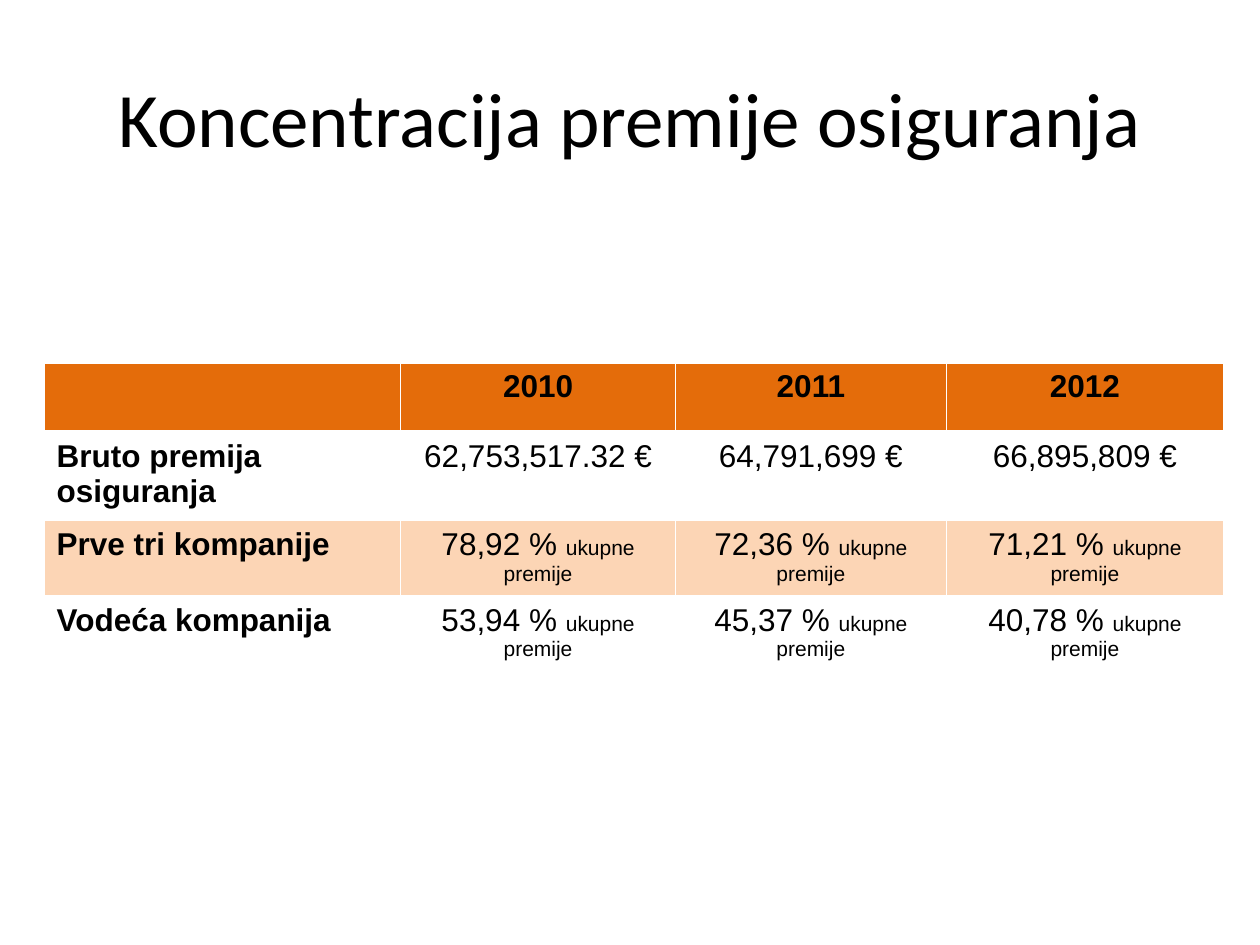
from dataclasses import dataclass

import pptx
import pptx.dml.color
import pptx.enum.text
import pptx.oxml
import pptx.oxml.ns
import pptx.util

Pt = pptx.util.Pt
Color = pptx.dml.color.RGBColor
Align = pptx.enum.text.PP_ALIGN


@dataclass(frozen=True)
class Theme:
    title_font: str = "Calibri"
    table_font: str = "Arial"
    title_size: float = 44
    body_size: float = 18
    note_size: float = 12
    text: str = "000000"
    border: str = "FFFFFF"
    header_fill: str = "E46C0A"
    plain_fill: str = "FFFFFF"
    band_fill: str = "FCD5B5"


@dataclass(frozen=True)
class TableRow:
    label: str
    values: tuple[str, ...]
    height: float
    fill: str
    note: str = ""
    header: bool = False


THEME = Theme()
SHARE_NOTE = "ukupne premije"
COLUMN_WIDTHS = (203.8, 157, 154.8, 158.4)
ROWS = (
    TableRow("", ("2010", "2011", "2012"), 39.6, THEME.header_fill, header=True),
    TableRow("Bruto premija osiguranja",
             ("62,753,517.32 €", "64,791,699 €", "66,895,809 €"),
             39.6, THEME.plain_fill),
    TableRow("Prve tri kompanije", ("78,92 % ", "72,36 % ", "71,21 % "),
             38.9, THEME.band_fill, SHARE_NOTE),
    TableRow("Vodeća kompanija", ("53,94 % ", "45,37 % ", "40,78 % "),
             45.4, THEME.plain_fill, SHARE_NOTE),
)


def add_run(paragraph, text: str, font: str, size: float, bold: bool = False) -> None:
    run = paragraph.add_run()
    run.text = text
    run.font.name = font
    run.font.size = Pt(size)
    run.font.bold = bold
    run.font.color.rgb = Color.from_string(THEME.text)


def add_title(slide, text: str) -> None:
    box = slide.shapes.add_textbox(Pt(36), Pt(21.6), Pt(648), Pt(90))
    frame = box.text_frame
    frame.word_wrap = True
    frame.vertical_anchor = pptx.enum.text.MSO_ANCHOR.MIDDLE
    paragraph = frame.paragraphs[0]
    paragraph.alignment = Align.CENTER
    add_run(paragraph, text, THEME.title_font, THEME.title_size)


def set_borders(cell, bottom_width: float) -> None:
    properties = cell._tc.get_or_add_tcPr()
    widths = {"lnL": 1, "lnR": 1, "lnT": 1, "lnB": bottom_width}
    for position, (side, width) in enumerate(widths.items()):
        line = pptx.oxml.parse_xml(
            f'<a:{side} {pptx.oxml.ns.nsdecls("a")} w="{Pt(width)}"><a:solidFill>'
            f'<a:srgbClr val="{THEME.border}"/></a:solidFill></a:{side}>'
        )
        properties.insert(position, line)


def fill_cell(cell, row: TableRow, column: int) -> None:
    cell.fill.solid()
    cell.fill.fore_color.rgb = Color.from_string(row.fill)
    set_borders(cell, 3 if row.header else 1)
    is_label = column == 0
    text = row.label if is_label else row.values[column - 1]
    paragraph = cell.text_frame.paragraphs[0]
    paragraph.alignment = Align.LEFT if is_label else Align.CENTER
    if text:
        add_run(paragraph, text, THEME.table_font, THEME.body_size, is_label or row.header)
    if row.note and not is_label:
        add_run(paragraph, row.note, THEME.table_font, THEME.note_size)


def add_premium_table(slide) -> None:
    frame = slide.shapes.add_table(
        len(ROWS), len(COLUMN_WIDTHS), Pt(25.2), Pt(207.4),
        Pt(sum(COLUMN_WIDTHS)), Pt(sum(row.height for row in ROWS)),
    )
    table = frame.table
    for column, width in zip(table.columns, COLUMN_WIDTHS):
        column.width = Pt(width)
    for table_row, row in zip(table.rows, ROWS):
        table_row.height = Pt(row.height)
        for column, cell in enumerate(table_row.cells):
            fill_cell(cell, row, column)


def main() -> None:
    presentation = pptx.Presentation()
    presentation.slide_width = Pt(720)
    presentation.slide_height = Pt(540)
    slide = presentation.slides.add_slide(presentation.slide_layouts[6])
    add_title(slide, "Koncentracija premije osiguranja")
    add_premium_table(slide)
    presentation.save("out.pptx")


if __name__ == "__main__":
    main()
